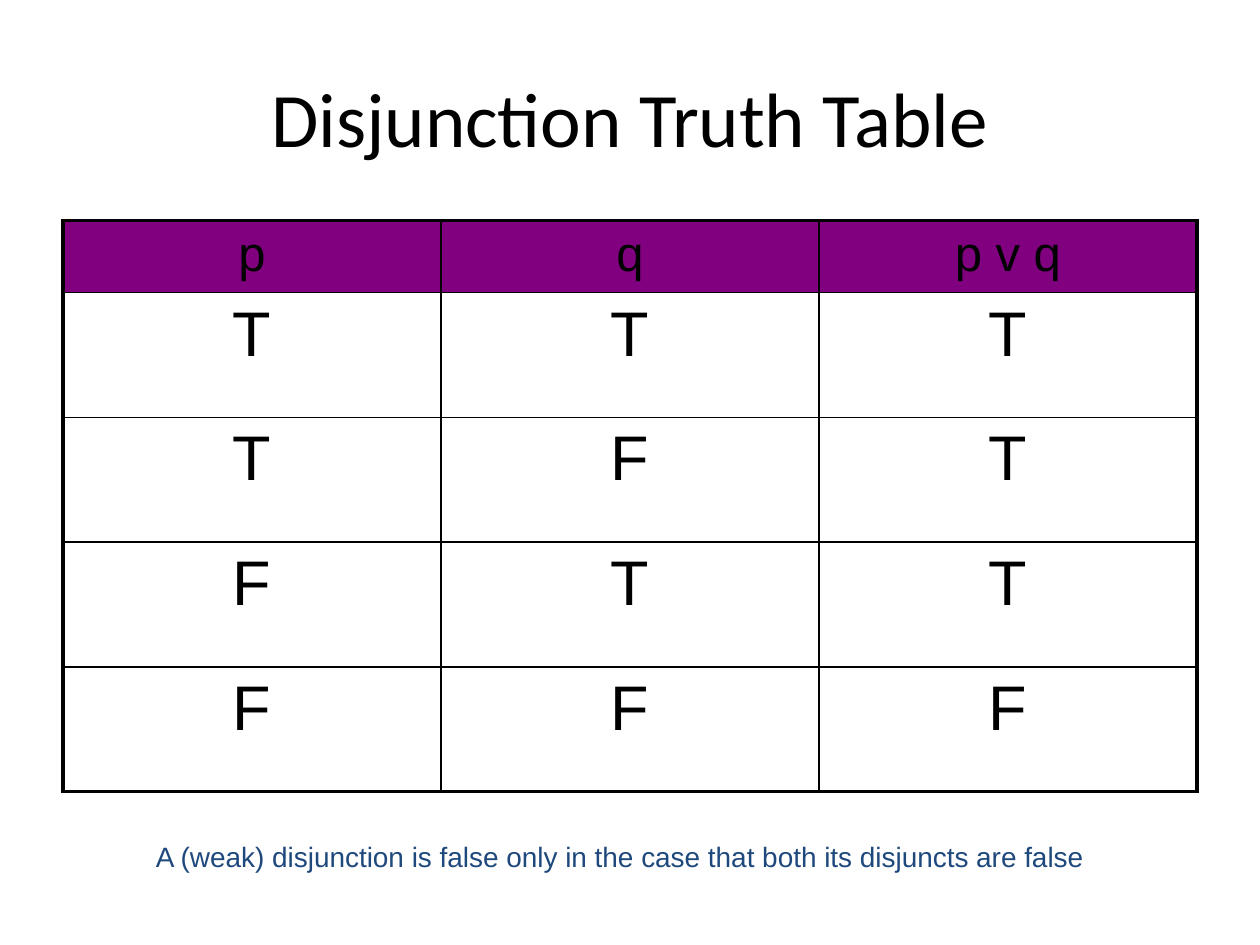
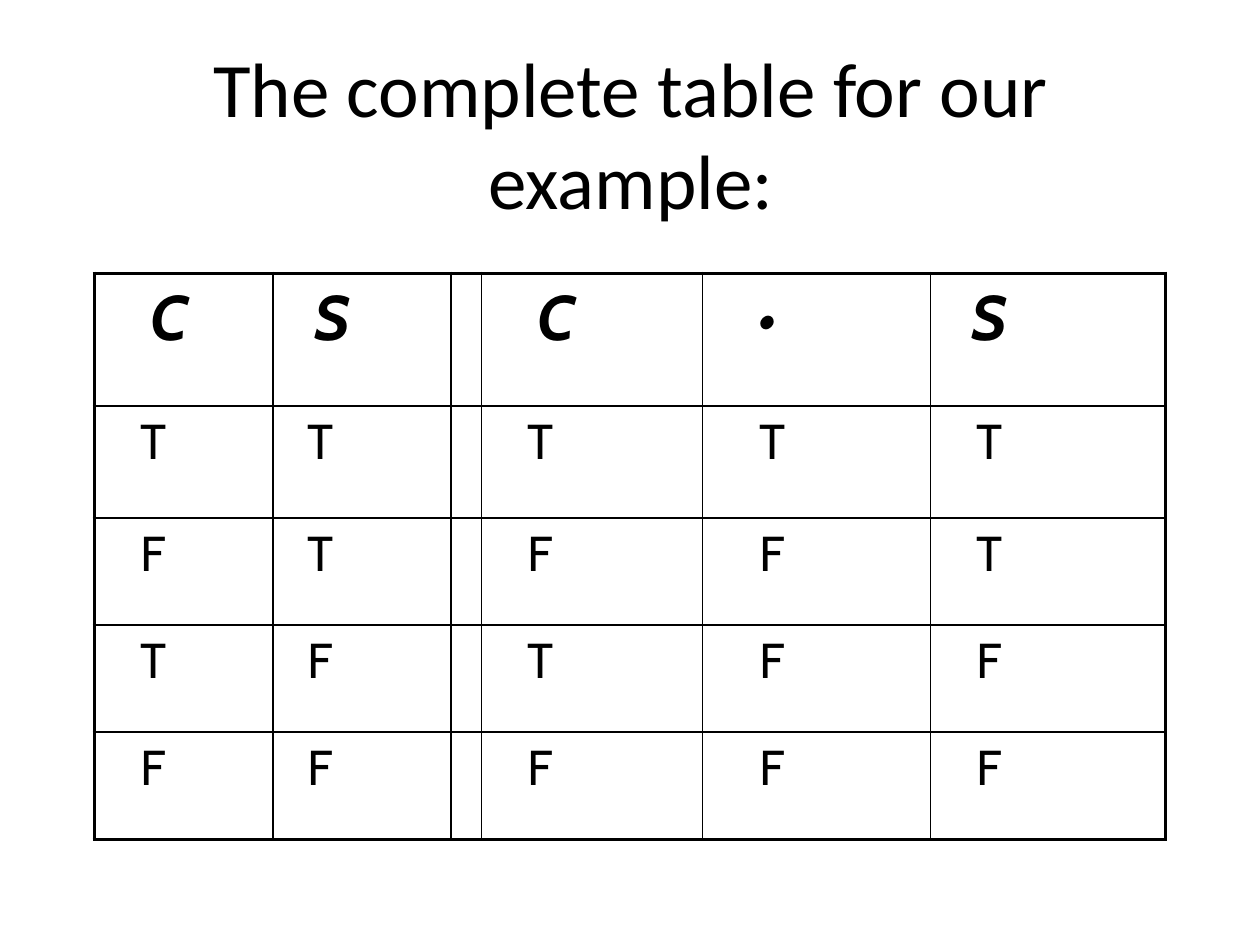
from pptx import Presentation
from pptx.dml.color import RGBColor as Rgb
from pptx.enum.text import MSO_ANCHOR as Anchor, PP_ALIGN as Align
from pptx.oxml import parse_xml
from pptx.oxml.ns import nsdecls
from pptx.util import Cm, Pt

HUES = {"ink": "000000", "head": "800080", "note": "1F497D"}

# Text formats shared by the slides
TITLE = {"name": "Calibri", "size": Pt(44)}
NOTE = {"name": "Arial", "size": Pt(16)}
LABEL = {"name": "Arial", "size": Pt(28)}
VALUE = {"name": "Arial", "size": Pt(36)}
SIGN = {"name": "Cabin", "size": Pt(36), "bold": True, "italic": True}
TRUTH = {"name": "Cabin", "size": Pt(28), "bold": False, "italic": False}


def write(frame, text, form, hue="ink", align=Align.CENTER):
    para = frame.paragraphs[0]
    para.alignment = align
    run = para.add_run()
    run.text = text
    for key, val in form.items():
        setattr(run.font, key, val)
    run.font.color.rgb = Rgb.from_string(HUES[hue])


deck = Presentation()
deck.slide_width, deck.slide_height = Cm(25.4), Cm(19.05)

# Each grid lists its box corner, column widths, row heights and cell texts;
# steps give the indent of each column, in word spaces, for header and body
pages = [
    {
        "texts": [
            ("Disjunction Truth Table", (1.27, 0.76, 22.86, 3.18), TITLE, "ink"),
            ("A (weak) disjunction is false only in the case that both its disjuncts are false",
             (1.07, 16.31, 22.86, 1.9), NOTE, "note"),
        ],
        "spot": (1.27, 4.45),
        "cols": [7.62] * 3,
        "rows": [1.45] + [2.515] * 4,
        "cells": [["p", "q", "p v q"], "TTT", "TFT", "FTT", "FFF"],
        "forms": (LABEL, VALUE),
        "fill": "head",
        "align": Align.CENTER,
        "steps": ([0] * 3, [0] * 3),
    },
    {
        "texts": [
            ("The complete table for our example:", (1.9, 0.64, 21.64, 4.06), TITLE, "ink"),
        ],
        "spot": (1.9, 5.51),
        "cols": [3.6, 3.59, 0.62, 4.45, 4.6, 4.74],
        "rows": [2.67, 2.26] + [2.16] * 3,
        "cells": ["CS C•S", "TT TTT", "FT FFT", "TF TFF", "FF FFF"],
        "forms": (SIGN, TRUTH),
        "fill": None,
        "align": Align.LEFT,
        "steps": ([3, 2, 0, 3, 3, 2], [3, 2, 0, 3, 4, 3]),
    },
]

for page in pages:
    slide = deck.slides.add_slide(deck.slide_layouts[6])

    # Title and note
    for text, spot, form, hue in page["texts"]:
        frame = slide.shapes.add_textbox(*map(Cm, spot)).text_frame
        frame.word_wrap = True
        frame.vertical_anchor = Anchor.MIDDLE
        write(frame, text, form, hue)

    # Truth table
    cols, rows = page["cols"], page["rows"]
    size = map(Cm, (*page["spot"], sum(cols), sum(rows)))
    table = slide.shapes.add_table(len(rows), len(cols), *size).table
    table.first_row = table.horz_banding = False
    for col, width in zip(table.columns, cols):
        col.width = Cm(width)
    for row, height in zip(table.rows, rows):
        row.height = Cm(height)

    for r, line in enumerate(page["cells"]):
        body = int(r > 0)
        form = page["forms"][body]
        for c, text in enumerate(line):
            cell = table.cell(r, c)

            # Thick rules on the outer edge, thin ones inside
            edges = {"L": c == 0, "R": c == len(cols) - 1,
                     "T": r == 0, "B": r == len(rows) - 1}
            for side, outer in edges.items():
                wide = Pt(2.25 if outer else 1)
                cell._tc.get_or_add_tcPr().append(parse_xml(
                    f'<a:ln{side} {nsdecls("a")} w="{wide}"><a:solidFill>'
                    f'<a:srgbClr val="{HUES["ink"]}"/></a:solidFill></a:ln{side}>'))

            if page["fill"] and not body:
                cell.fill.solid()
                cell.fill.fore_color.rgb = Rgb.from_string(HUES[page["fill"]])
            else:
                cell.fill.background()

            if text.strip():
                step = page["steps"][body][c]
                cell.margin_left = Cm(0.25) + int(step * form["size"] * 0.23)
                write(cell.text_frame, text, form, align=page["align"])

deck.save("out.pptx")
